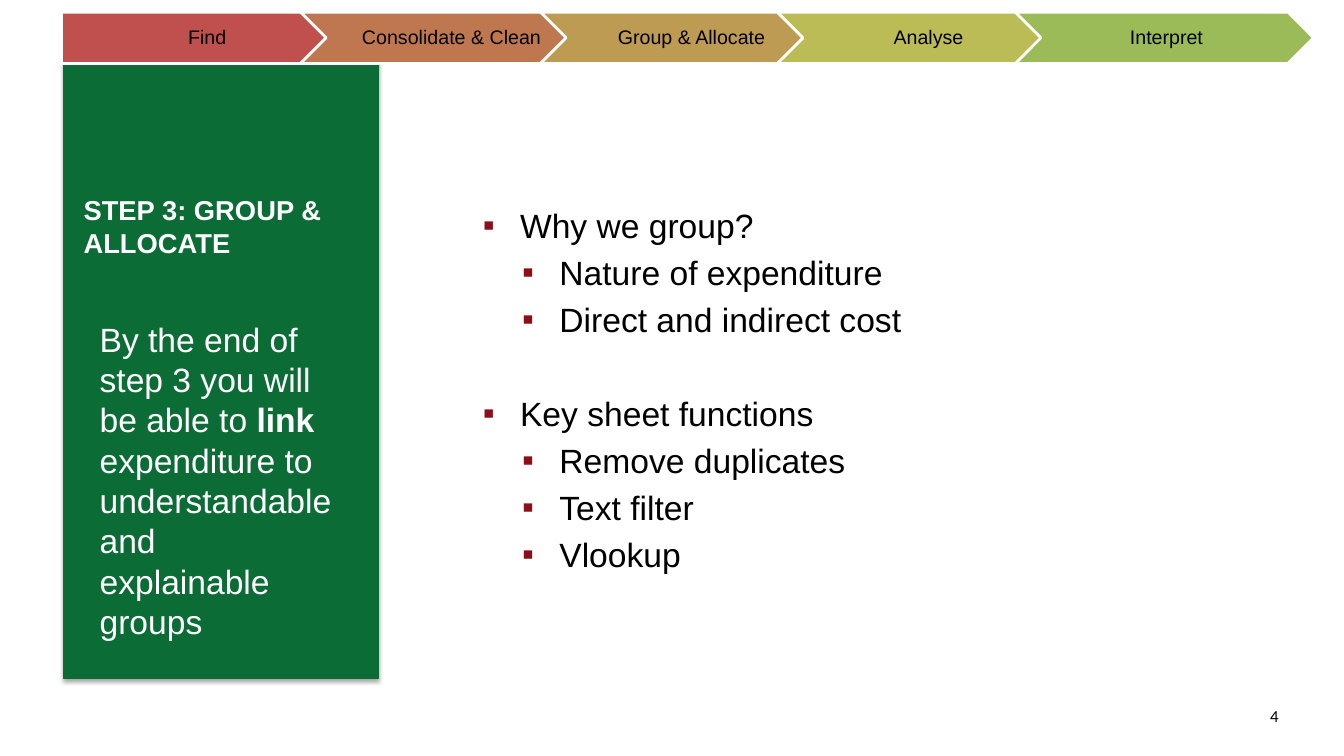
import pptx
import pptx.dml.color
import pptx.enum.shapes
import pptx.enum.text
import pptx.oxml
import pptx.oxml.ns
import pptx.util

Inches, Pt = pptx.util.Inches, pptx.util.Pt
SHAPE = pptx.enum.shapes.MSO_SHAPE
ALIGN = pptx.enum.text.PP_ALIGN
ANCHOR = pptx.enum.text.MSO_ANCHOR

# Content
COLORS = {
    "panel": "0B6C36", "panel_line": "086C35", "bullet": "8B0E18",
    "white": "FFFFFF", "black": "000000",
}
STEPS = [  # label, left edge, fill
    ("Find", 0.61, "C0504D"),
    ("Consolidate & Clean", 2.98, "BF7750"),
    ("Group & Allocate", 5.36, "BD9B53"),
    ("Analyse", 7.71, "BCBC56"),
    ("Interpret", 10.07, "9BBB59"),
]
TITLE = "STEP 3: GROUP & ALLOCATE"
GOAL = [  # text, bold
    ("By the end of step 3 you will be able to ", False),
    ("link", True),
    (" expenditure to understandable and explainable groups", False),
]
TOPICS = [
    ("Why we group?", ["Nature of expenditure", "Direct and indirect cost"]),
    ("Key sheet functions", ["Remove duplicates", "Text filter", "Vlookup"]),
]
PAGE_NUMBER = "4"

# Layout
BODY_SIZE = 24
SPACE_BEFORE = 4.8
TOPIC_GAP = 38.4
INDENTS = [0.79, 1.18]
HANGING = 0.37


def rgb(value):
    return pptx.dml.color.RGBColor.from_string(value)


def style(paragraph, size, color, name="Arial", bold=None):
    font = paragraph.font
    font.size, font.name, font.bold = Pt(size), name, bold
    font.color.rgb = rgb(color)


def set_frame(frame, insets, anchor=ANCHOR.TOP):
    frame.word_wrap = True
    frame.vertical_anchor = anchor
    (frame.margin_left, frame.margin_top,
     frame.margin_right, frame.margin_bottom) = map(Inches, insets)


def add_box(page, place, top_inset=0.05, anchor=ANCHOR.TOP):
    frame = page.shapes.add_textbox(*map(Inches, place)).text_frame
    set_frame(frame, (0.1, top_inset, 0.1, 0.05), anchor)
    return frame


def add_solid(page, kind, place, fill, line, width):
    shape = page.shapes.add_shape(kind, *map(Inches, place))
    shape.shadow.inherit = False
    shape.fill.solid()
    shape.fill.fore_color.rgb = rgb(fill)
    shape.line.color.rgb = rgb(line)
    shape.line.width = Pt(width)
    return shape


def add_shadow(shape):
    effects = shape._element.spPr.find(pptx.oxml.ns.qn("a:effectLst"))
    effects.append(pptx.oxml.parse_xml(
        f'<a:outerShdw {pptx.oxml.ns.nsdecls("a")} blurRad="{Pt(3.1)}" '
        f'dist="{Pt(1.8)}" dir="5400000" rotWithShape="0">'
        f'<a:srgbClr val="{COLORS["black"]}"><a:alpha val="35000"/></a:srgbClr>'
        '</a:outerShdw>'))


def add_bullet(paragraph, level):
    properties = paragraph._p.get_or_add_pPr()
    properties.set("marL", str(Inches(INDENTS[level])))
    properties.set("indent", str(-Inches(HANGING)))
    space = pptx.oxml.ns.nsdecls("a")
    for xml in (
        f'<a:buClr {space}><a:srgbClr val="{COLORS["bullet"]}"/></a:buClr>',
        f'<a:buFont {space} typeface="Arial"/>',
        f'<a:buChar {space} char="▪"/>',
    ):
        properties.append(pptx.oxml.parse_xml(xml))


def main():
    deck = pptx.Presentation()
    deck.slide_width, deck.slide_height = Inches(13.33), Inches(7.5)
    page = deck.slides.add_slide(deck.slide_layouts[6])

    # Green side panel
    panel = add_solid(page, SHAPE.RECTANGLE, (0.63, 0.34, 3.12, 6.39),
                      COLORS["panel"], COLORS["panel_line"], 0.75)
    add_shadow(panel)

    # Page number
    number = add_box(page, (12.02, 6.95, 0.76, 0.39)).paragraphs[0]
    number.text = PAGE_NUMBER
    number.alignment = ALIGN.RIGHT
    style(number, 12, COLORS["black"], "Calibri")

    # Topics with nested bullets
    frame = add_box(page, (4.27, 0.76, 7.87, 5.57), top_inset=1.27)
    lines = [(text, level) for topic, details in TOPICS
             for text, level in [(topic, 0)] + [(item, 1) for item in details]]
    for index, (text, level) in enumerate(lines):
        para = frame.add_paragraph() if index else frame.paragraphs[0]
        para.text = text
        para.level = level
        if index:
            para.space_before = Pt(SPACE_BEFORE if level else TOPIC_GAP)
        add_bullet(para, level)
        style(para, BODY_SIZE, COLORS["black"])

    # Panel title and goal
    title = add_box(page, (0.73, 1.27, 2.85, 1.35), anchor=ANCHOR.BOTTOM).paragraphs[0]
    title.text = TITLE
    style(title, 19.5, COLORS["white"], bold=True)

    goal = add_box(page, (0.89, 2.74, 2.53, 3.58), top_inset=0.42).paragraphs[0]
    style(goal, BODY_SIZE, COLORS["white"])
    for text, bold in GOAL:
        span = goal.add_run()
        span.text = text
        span.font.bold = bold

    # Process arrows
    for index, (label, left, fill) in enumerate(STEPS):
        kind = SHAPE.CHEVRON if index else SHAPE.PENTAGON
        arrow = add_solid(page, kind, (left, 0.12, 2.96, 0.51),
                          fill, COLORS["white"], 2)
        set_frame(arrow.text_frame, (0.06 if index else 0.08, 0.04, 0.02, 0.04),
                  ANCHOR.MIDDLE)
        para = arrow.text_frame.paragraphs[0]
        para.text = label
        para.alignment = ALIGN.CENTER
        para.line_spacing = 0.9
        style(para, 14, COLORS["black"])

    deck.save("out.pptx")


if __name__ == "__main__":
    main()
